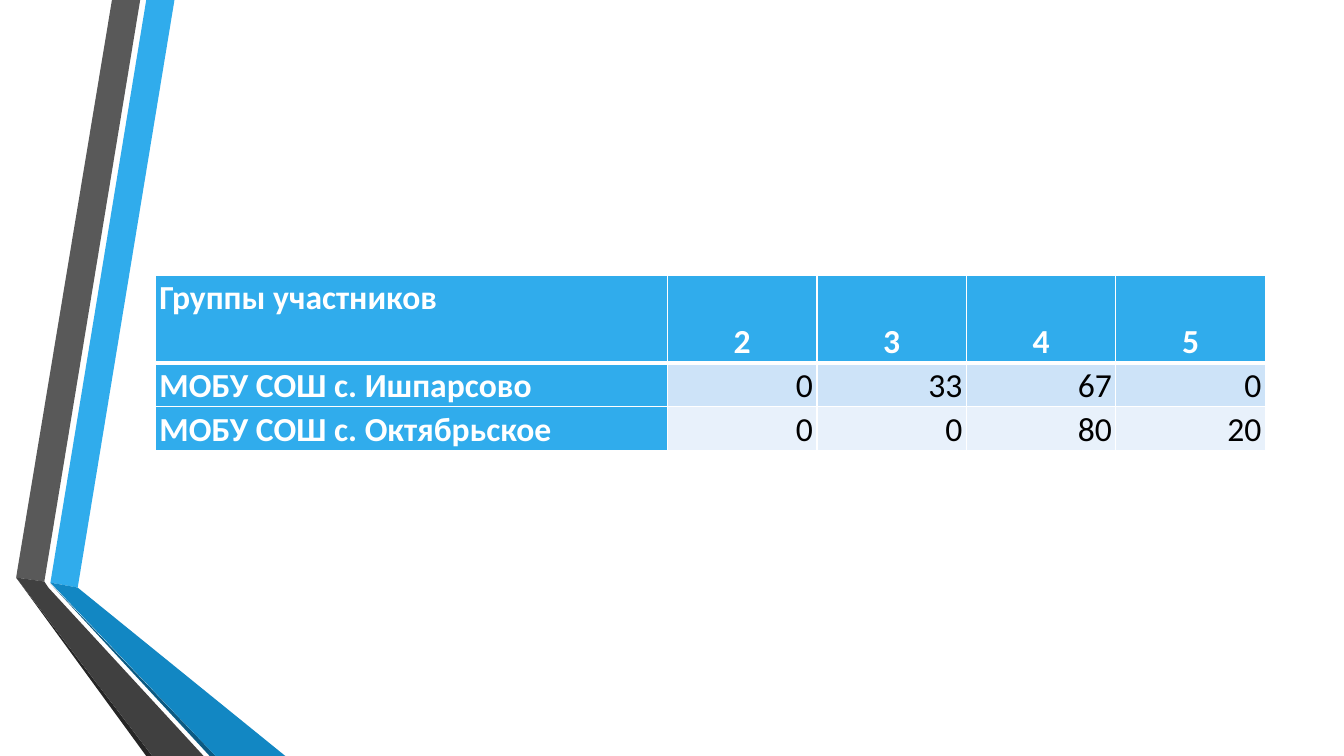
from pptx import Presentation
from pptx.dml.color import RGBColor
from pptx.enum.text import MSO_ANCHOR, PP_ALIGN
from pptx.oxml import parse_xml
from pptx.oxml.ns import nsdecls
from pptx.util import Inches, Pt

WHITE = RGBColor(0xFF, 0xFF, 0xFF)
BLACK = RGBColor(0, 0, 0)
BLUE = RGBColor(0x30, 0xAC, 0xEC)
MID = RGBColor(0x12, 0x87, 0xC3)
NAVY = RGBColor(0x0C, 0x5A, 0x82)
GRAY = RGBColor(0x59, 0x59, 0x59)
DARK = RGBColor(0x40, 0x40, 0x40)
COAL = RGBColor(0x26, 0x26, 0x26)
BANDS = [RGBColor(0xCD, 0xE3, 0xF8), RGBColor(0xE8, 0xF1, 0xFB)]

# Ribbon corners, in percent of the slide's width and height
RIBBONS = [
    (BLUE, [(3.75, 77.07), (5.78, 77.73), (12.98, 0), (10.88, 0)]),
    (GRAY, [(10.43, 0), (8.33, 0), (1.2, 76.4), (3.3, 76.93)]),
    (COAL, [(1.2, 76.4), (10.88, 100), (11.33, 100)]),
    (NAVY, [(3.75, 77.2), (15.6, 100), (16.05, 100)]),
    (MID, [(3.75, 77.07), (16.05, 100), (21.23, 100), (5.78, 77.73)]),
    (DARK, [(15.15, 100), (3.6, 77.73), (3.3, 76.93), (1.2, 76.4),
            (11.33, 100)]),
]

ROWS = [
    ["Группы участников", "2", "3", "4", "5"],
    ["МОБУ СОШ с. Ишпарсово", "0", "33", "67", "0"],
    ["МОБУ СОШ с. Октябрьское", "0", "0", "80", "20"],
]


class Deck:
    font = "Calibri"
    size = Pt(24)
    inset = Inches(0.04)

    def __init__(self):
        self.prs = Presentation()
        self.prs.slide_width = Inches(13.33)
        self.prs.slide_height = Inches(7.5)
        self.slide = self.prs.slides.add_slide(self.prs.slide_layouts[6])

    def wide(self, share):
        return int(self.prs.slide_width * share / 100)

    def high(self, share):
        return int(self.prs.slide_height * share / 100)

    def ribbon(self, color, points):
        spots = [(self.wide(x), self.high(y)) for x, y in points]
        pen = self.slide.shapes.build_freeform(*spots[0])
        pen.add_line_segments(spots[1:], close=True)
        shape = pen.convert_to_shape()
        shape.shadow.inherit = False
        shape.fill.solid()
        shape.fill.fore_color.rgb = color
        shape.line.fill.background()

    def table(self, left, top, widths, heights, rows):
        grid = self.slide.shapes.add_table(
            len(rows), len(widths), self.wide(left), self.high(top),
            self.wide(sum(widths)), self.high(sum(heights))).table
        for col, width in zip(grid.columns, widths):
            col.width = self.wide(width)
        for row, height in zip(grid.rows, heights):
            row.height = self.high(height)
        for r, texts in enumerate(rows):
            for c, text in enumerate(texts):
                self.cell(grid.cell(r, c), text, r, c)

    def cell(self, cell, text, r, c):
        head = r == 0 or c == 0
        self.edges(cell, 3 if r == 1 else 1, 3 if r == 0 else 1)
        cell.fill.solid()
        cell.fill.fore_color.rgb = BLUE if head else BANDS[r - 1]
        cell.margin_left = cell.margin_right = self.inset
        cell.margin_top = cell.margin_bottom = 0
        corner = r == 0 and c == 0
        cell.vertical_anchor = MSO_ANCHOR.TOP if corner else MSO_ANCHOR.BOTTOM
        cell.text_frame.text = text
        para = cell.text_frame.paragraphs[0]
        para.line_spacing = 1.07
        if c == 0:
            para.alignment = PP_ALIGN.LEFT
        else:
            para.alignment = PP_ALIGN.CENTER if r == 0 else PP_ALIGN.RIGHT
        font = para.runs[0].font
        font.name, font.size, font.bold = self.font, self.size, head
        font.color.rgb = WHITE if head else BLACK

    def edges(self, cell, top, bottom):
        props = cell._tc.get_or_add_tcPr()
        for side, width in zip("LRTB", (1, 1, top, bottom)):
            props.append(parse_xml(
                f'<a:ln{side} {nsdecls("a")} w="{Pt(width)}"><a:solidFill>'
                f'<a:srgbClr val="{WHITE}"/></a:solidFill></a:ln{side}>'))


def main():
    deck = Deck()
    # Folded ribbons on the left
    for color, points in RIBBONS:
        deck.ribbon(color, points)
    # Results by school
    deck.table(11.57, 36.4, [38.1] + [11.12] * 4, [11.6, 5.83, 5.83], ROWS)
    deck.prs.save("out.pptx")


if __name__ == "__main__":
    main()
